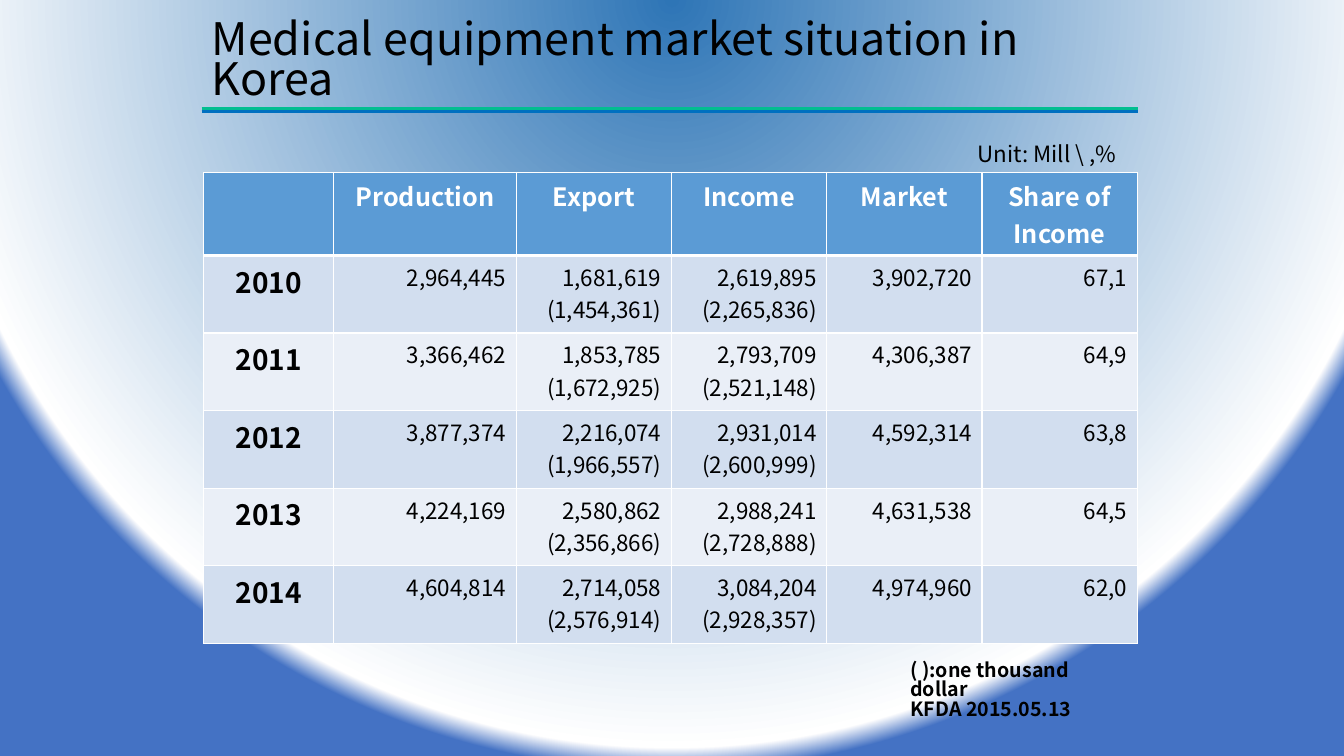
from dataclasses import dataclass

from lxml import etree
from pptx import Presentation
from pptx.dml.color import RGBColor
from pptx.enum import text
from pptx.oxml import parse_xml
from pptx.oxml import ns
from pptx.util import Inches, Pt

FONT = "Noto Sans CJK KR"
BLACK = RGBColor(0x00, 0x00, 0x00)
WHITE = RGBColor(0xFF, 0xFF, 0xFF)
GREEN = RGBColor(0x02, 0xBE, 0x91)
BLUE = RGBColor(0x00, 0x70, 0xC0)
HEADER_FILL = RGBColor(0x5B, 0x9B, 0xD5)
BAND_FILLS = (RGBColor(0xD2, 0xDE, 0xEF), RGBColor(0xEA, 0xEF, 0xF7))
GLOW_STOPS = (
    (0, RGBColor(0x2E, 0x75, 0xB6)),
    (97, WHITE),
    (100, RGBColor(0x44, 0x72, 0xC4)),
)

LEFT, TOP = text.PP_ALIGN.LEFT, text.MSO_ANCHOR.TOP
CENTER, RIGHT = text.PP_ALIGN.CENTER, text.PP_ALIGN.RIGHT

HEADERS = ("", "Production", "Export", "Income", "Market", "Share of Income")
COLUMN_WIDTHS = (1.29, 1.81, 1.54, 1.54, 1.54, 1.54)
HEADER_HEIGHT, YEAR_HEIGHT = 0.79, 0.77
YEARS = (
    ("2010", "2,964,445", "1,681,619\n(1,454,361)", "2,619,895\n(2,265,836)", "3,902,720", "67,1"),
    ("2011", "3,366,462", "1,853,785\n(1,672,925)", "2,793,709\n(2,521,148)", "4,306,387", "64,9"),
    ("2012", "3,877,374", "2,216,074\n(1,966,557)", "2,931,014\n(2,600,999)", "4,592,314", "63,8"),
    ("2013", "4,224,169", "2,580,862\n(2,356,866)", "2,988,241\n(2,728,888)", "4,631,538", "64,5"),
    ("2014", "4,604,814", "2,714,058\n(2,576,914)", "3,084,204\n(2,928,357)", "4,974,960", "62,0"),
)


@dataclass
class Note:
    words: str
    left: float
    top: float
    width: float
    height: float
    size: float
    bold: bool = False
    spacing: float = 1.0


@dataclass
class Rule:
    y: float
    color: RGBColor


NOTES = (
    Note("Unit: Mill \\ ,%", 9.6, 1.34, 1.69, 0.37, 16),
    Note("( ):one thousand dollar\nKFDA 2015.05.13", 8.93, 6.52, 2.36, 0.57, 14,
         bold=True, spacing=0.82),
)
RULES = (Rule(1.08, GREEN), Rule(1.11, BLUE))


def write(frame, words: str, *, size: float, color: RGBColor = BLACK, bold: bool = False,
          align=LEFT, spacing: float = 1.0) -> None:
    """Fill a text frame, one paragraph for each line of words."""
    frame.word_wrap = True
    for index, line in enumerate(words.split("\n")):
        para = frame.paragraphs[0] if index == 0 else frame.add_paragraph()
        para.alignment = align
        para.line_spacing = spacing
        span = para.add_run()
        span.text = line
        span.font.name = FONT
        span.font.size = Pt(size)
        span.font.bold = bold
        span.font.color.rgb = color


def paint_background(page) -> None:
    page.background.fill.gradient()
    gradient = page.element.find(".//" + ns.qn("a:gradFill"))
    for child in list(gradient):
        gradient.remove(child)
    stops = etree.SubElement(gradient, ns.qn("a:gsLst"))
    for percent, color in GLOW_STOPS:
        stop = etree.SubElement(stops, ns.qn("a:gs"), pos=str(percent * 1000))
        etree.SubElement(stop, ns.qn("a:srgbClr"), val=str(color))
    circle = etree.SubElement(gradient, ns.qn("a:path"), path="circle")
    etree.SubElement(circle, ns.qn("a:fillToRect"), l="50000", t="-80000", r="50000", b="180000")


def add_rule(page, rule: Rule) -> None:
    line = page.shapes.add_connector(1, Inches(2), Inches(rule.y), Inches(11.29), Inches(rule.y))
    line.line.color.rgb = rule.color
    line.line.width = Pt(2.25)
    etree.SubElement(line.element.spPr, ns.qn("a:effectLst"))


def add_note(page, note: Note) -> None:
    box = page.shapes.add_textbox(Inches(note.left), Inches(note.top),
                                  Inches(note.width), Inches(note.height))
    write(box.text_frame, note.words, size=note.size, bold=note.bold, spacing=note.spacing)


def style_cell(cell, fill: RGBColor, top: float = 1, bottom: float = 1) -> None:
    """Give a cell white borders (widths in points) and a plain fill."""
    properties = cell._tc.get_or_add_tcPr()
    for side, width in (("L", 1), ("R", 1), ("T", top), ("B", bottom)):
        properties.append(parse_xml(
            f'<a:ln{side} {ns.nsdecls("a")} w="{Pt(width)}"><a:solidFill>'
            f'<a:srgbClr val="{WHITE}"/></a:solidFill></a:ln{side}>'))
    cell.fill.solid()
    cell.fill.fore_color.rgb = fill
    cell.vertical_anchor = TOP


def add_market_table(page) -> None:
    height = HEADER_HEIGHT + YEAR_HEIGHT * len(YEARS)
    table = page.shapes.add_table(len(YEARS) + 1, len(HEADERS), Inches(2.02), Inches(1.71),
                                  Inches(sum(COLUMN_WIDTHS)), Inches(height)).table
    for column, width in zip(table.columns, COLUMN_WIDTHS):
        column.width = Inches(width)
    for index, row in enumerate(table.rows):
        row.height = Inches(YEAR_HEIGHT if index else HEADER_HEIGHT)

    # Header row
    for column, label in enumerate(HEADERS):
        cell = table.cell(0, column)
        style_cell(cell, HEADER_FILL, bottom=3)
        if label:
            write(cell.text_frame, label, size=18, color=WHITE, bold=True, align=CENTER)

    # One banded row for each year
    for index, values in enumerate(YEARS):
        for column, value in enumerate(values):
            cell = table.cell(index + 1, column)
            style_cell(cell, BAND_FILLS[index % 2], top=1 if index else 3)
            is_year = column == 0
            write(cell.text_frame, value, size=20 if is_year else 16, bold=is_year,
                  align=CENTER if is_year else RIGHT)


def main() -> None:
    deck = Presentation()
    deck.slide_width, deck.slide_height = Inches(13.33), Inches(7.5)
    page = deck.slides.add_slide(deck.slide_layouts[5])
    paint_background(page)

    # Title
    title = page.shapes.title
    title.left, title.top = Inches(2), Inches(0.4)
    title.width, title.height = Inches(9.49), Inches(0.46)
    title.text_frame.vertical_anchor = text.MSO_ANCHOR.MIDDLE
    title.text_frame.auto_size = text.MSO_AUTO_SIZE.NONE
    write(title.text_frame, "Medical equipment market situation in Korea", size=32, spacing=0.74)

    # Table, rules under the title, and notes
    add_market_table(page)
    for rule in RULES:
        add_rule(page, rule)
    for note in NOTES:
        add_note(page, note)
    deck.save("out.pptx")


if __name__ == "__main__":
    main()
